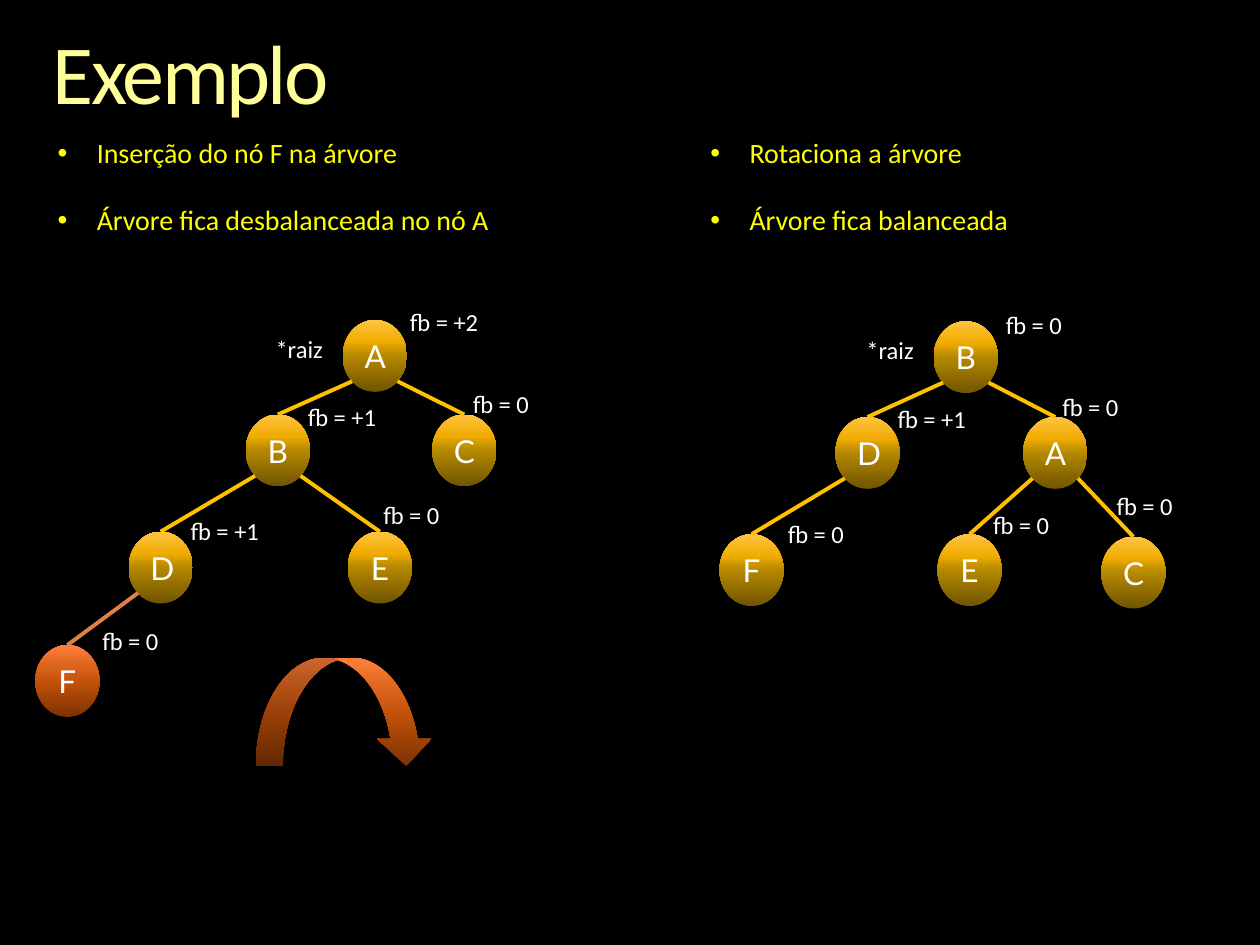
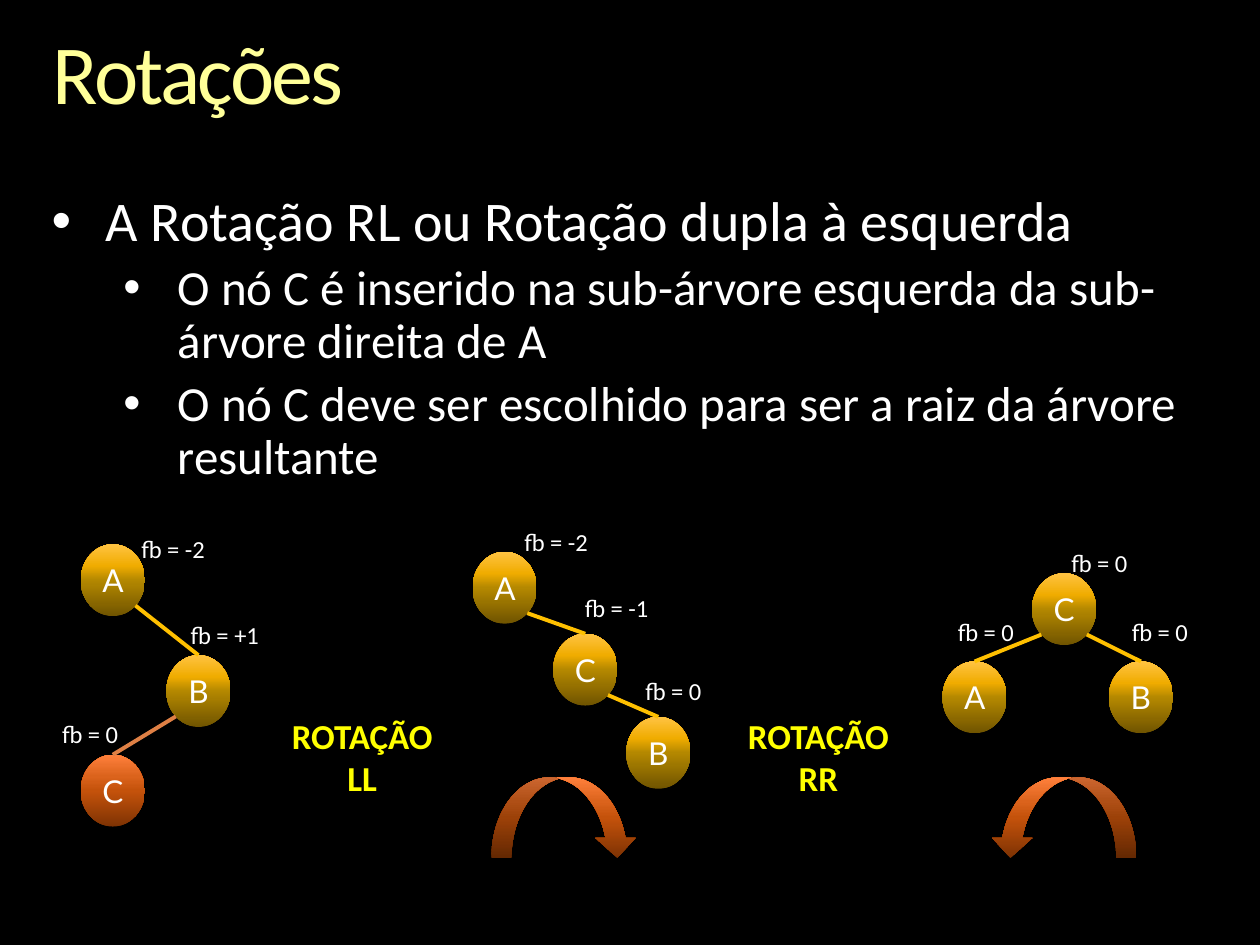
from lxml import etree
from pptx import Presentation
from pptx.dml.color import RGBColor
from pptx.enum.shapes import MSO_CONNECTOR, MSO_SHAPE
from pptx.enum.text import MSO_ANCHOR, MSO_AUTO_SIZE, PP_ALIGN
from pptx.oxml.ns import qn
from pptx.util import Inches, Pt

STRAIGHT = MSO_CONNECTOR.STRAIGHT
OVAL, CURVED_ARROW = MSO_SHAPE.OVAL, MSO_SHAPE.CURVED_DOWN_ARROW
TOP, NO_FIT = MSO_ANCHOR.TOP, MSO_AUTO_SIZE.NONE
LEFT, CENTER = PP_ALIGN.LEFT, PP_ALIGN.CENTER

BLACK = RGBColor(0x00, 0x00, 0x00)
WHITE = RGBColor(0xFF, 0xFF, 0xFF)
YELLOW = RGBColor(0xFF, 0xFF, 0x00)
GOLD = RGBColor(0xFF, 0xC0, 0x00)
ORANGE = RGBColor(0xDF, 0x80, 0x45)
CREAM, PALE, AMBER = (RGBColor(0xFF, 0xFF, 0xB9), RGBColor(0xFF, 0xFF, 0x99),
                      RGBColor(0xF6, 0xAE, 0x1E))

# Gradients: (position in percent, colour)
TITLE_STOPS = [(0, CREAM), (36, PALE), (86, AMBER)]
GOLD_STOPS = [(0, RGBColor(0x70, 0x54, 0x00)), (50, RGBColor(0xB4, 0x88, 0x00)),
              (70, RGBColor(0xF0, 0xAC, 0x00)), (100, RGBColor(0xFF, 0xC3, 0x42))]
ORANGE_STOPS = [(0, RGBColor(0x7D, 0x32, 0x03)), (50, RGBColor(0xC4, 0x52, 0x0B)),
                (70, RGBColor(0xDB, 0x63, 0x1C)), (100, RGBColor(0xFF, 0x80, 0x3C))]

BODY_FONT, NODE_FONT = "Calibri", "Lato"

# Grid of 100 columns by 75 rows; all lengths below are in its cells
SLIDE_W, SLIDE_H = Inches(10), Inches(7.5)
COL, ROW = SLIDE_W / 100, SLIDE_H / 75
NODE_W, NODE_H = 5.1, 5.7
LABEL_W, LABEL_H = 9.7, 3.4
DIAGONAL = 0.5 ** 0.5


def cells(*lengths):
    """Turn alternating columns and rows into slide lengths."""
    return [round(n * (ROW if i % 2 else COL)) for i, n in enumerate(lengths)]


def fill_gradient(fill, stops, angle):
    fill.gradient()
    fill.gradient_angle = angle
    stop_list = fill._xPr.find(qn("a:gradFill")).find(qn("a:gsLst"))
    for old in list(stop_list):
        stop_list.remove(old)
    for position, color in stops:
        stop = etree.SubElement(stop_list, qn("a:gs"), pos=str(position * 1000))
        etree.SubElement(stop, qn("a:srgbClr"), val=str(color))


def add_run(p, text, size, color=WHITE, font=BODY_FONT, bold=False):
    r = p.add_run()
    r.text = text
    r.font.size, r.font.name, r.font.bold = Pt(size), font, bold
    if color is not None:
        r.font.color.rgb = color
    return r


def add_text_box(shapes, box, inset=True):
    tf = shapes.add_textbox(*cells(*box)).text_frame
    tf.word_wrap = True
    if not inset:
        tf.margin_left = tf.margin_right = tf.margin_top = tf.margin_bottom = 0
    return tf


def add_centred_text(shapes, box, text, size, color=WHITE, bold=False):
    p = add_text_box(shapes, box).paragraphs[0]
    p.alignment = CENTER
    add_run(p, text, size, color, bold=bold)


def add_bullets(shapes, box, items, color, gap, line_spacing=1.0, inset=True):
    """Items are (level, text, size, margin, hang), the last two in columns."""
    tf = add_text_box(shapes, box, inset)
    for i, (level, text, size, margin, hang) in enumerate(items):
        p = tf.paragraphs[0] if i == 0 else tf.add_paragraph()
        p.level, p.line_spacing = level, line_spacing
        if i:
            p.space_before = Pt(gap)
        pPr = p._p.get_or_add_pPr()
        pPr.set("marL", str(round(margin * COL)))
        pPr.set("indent", str(round(-hang * COL)))
        etree.SubElement(pPr, qn("a:buFont"), typeface="Arial")
        etree.SubElement(pPr, qn("a:buChar"), char="•")
        add_run(p, text, size, color)


def add_gradient_shape(shapes, kind, box, stops):
    sp = shapes.add_shape(kind, *cells(*box))
    sp.shadow.inherit = False
    fill_gradient(sp.fill, stops, 90)
    sp.line.fill.background()
    return sp


def add_tree(s, origin, nodes, edges, new_node=None, root=None):
    """Nodes: name -> (x, y, balance label, label shift from the node's top centre)."""
    left, top = origin
    shapes = s.shapes.add_group_shape().shapes
    places = {name: (left + x, top + y) for name, (x, y, _, _) in nodes.items()}

    # Nodes
    for name, (x, y) in places.items():
        stops = ORANGE_STOPS if name == new_node else GOLD_STOPS
        sp = add_gradient_shape(shapes, OVAL, (x, y, NODE_W, NODE_H), stops)
        p = sp.text_frame.paragraphs[0]
        p.alignment = CENTER
        add_run(p, name, 18, font=NODE_FONT)

    # Edges, from the parent's lower diagonal to the top of the child
    for parent, child in edges:
        (px, py), (cx, cy) = places[parent], places[child]
        side = 1 if cx > px else -1
        start = (px + NODE_W * (1 + side * DIAGONAL) / 2, py + NODE_H * (1 + DIAGONAL) / 2)
        line = shapes.add_connector(STRAIGHT, *cells(*start, cx + NODE_W / 2, cy))
        line.line.color.rgb = ORANGE if child == new_node else GOLD
        line.line.width = Pt(2.25)
        etree.SubElement(line._element.spPr, qn("a:effectLst"))

    # Balance factors and root marker
    labels = [(name, text, shift) for name, (_, _, text, shift) in nodes.items()]
    if root:
        labels.append((root, "*raiz", (-6, 0.6)))
    for name, text, (dx, dy) in labels:
        x, y = places[name]
        box = (x + (NODE_W - LABEL_W) / 2 + dx, y + dy, LABEL_W, LABEL_H)
        add_centred_text(shapes, box, text, 14)


def add_rotation_arrow(s, box, flipped=False):
    sp = add_gradient_shape(s.shapes, CURVED_ARROW, box, ORANGE_STOPS)
    if flipped:
        sp._element.spPr.xfrm.set("flipH", "1")


def add_titled_slide(prs, title):
    s = prs.slides.add_slide(prs.slide_layouts[5])
    sp = s.shapes.title
    sp.left, sp.top, sp.width, sp.height = cells(4.2, 2.5, 91.7, 7.3)
    tf = sp.text_frame
    tf.margin_left = tf.margin_right = tf.margin_top = tf.margin_bottom = 0
    tf.vertical_anchor, tf.auto_size, tf.word_wrap = TOP, NO_FIT, True
    p = tf.paragraphs[0]
    p.alignment, p.line_spacing = LEFT, 0.9
    r = add_run(p, title, 48, color=None)
    fill_gradient(r.font.fill, TITLE_STOPS, 270)
    r.font._element.set("spc", "-150")
    return s


def build_example(prs):
    s = add_titled_slide(prs, "Exemplo")

    # Steps above each tree
    steps = [(3.6, "Inserção do nó F na árvore", "Árvore fica desbalanceada no nó A"),
             (55.4, "Rotaciona a árvore", "Árvore fica balanceada")]
    for left, *texts in steps:
        items = [(0, text, 16, 3.1, 3.1) for text in texts]
        add_bullets(s.shapes, (left, 10.3, 38.8, 9.1), items, YELLOW, gap=19)

    # Unbalanced tree
    add_tree(s, (2.8, 25.4), {
        "A": (24.4, 0, "fb = +2", (5.5, -1.5)),
        "B": (16.7, 7.5, "fb = +1", (5.1, -1.5)),
        "C": (31.5, 7.5, "fb = 0", (2.9, -2.5)),
        "D": (7.4, 16.8, "fb = +1", (5.1, -1.7)),
        "E": (24.8, 16.8, "fb = 0", (2.5, -3)),
        "F": (0, 25.8, "fb = 0", (5, -2)),
    }, ["AB", "AC", "BD", "BE", "DF"], new_node="F", root="A")
    add_rotation_arrow(s, (20.3, 52.2, 14.1, 8.6))

    # Balanced tree
    add_tree(s, (57.1, 25.5), {
        "B": (17, 0, "fb = 0", (5.4, -1.4)),
        "D": (9.2, 7.6, "fb = +1", (5.1, -1.5)),
        "A": (24.1, 7.6, "fb = 0", (2.8, -2.5)),
        "F": (0, 16.9, "fb = 0", (5.1, -1.7)),
        "E": (17.3, 16.9, "fb = 0", (4.1, -2.4)),
        "C": (30.3, 17.1, "fb = 0", (0.9, -4.1)),
    }, ["BD", "BA", "DF", "AE", "AC"], root="B")


def build_rotations(prs):
    s = add_titled_slide(prs, "Rotações")
    add_bullets(s.shapes, (4.1, 15.3, 93.9, 23.7), [
        (0, "A Rotação RL ou Rotação dupla à esquerda", 32, 4.3, 4.3),
        (1, "O nó C é inserido na sub-árvore esquerda da sub-árvore direita de A",
         28, 10, 4.3),
        (1, "O nó C deve ser escolhido para ser a raiz da árvore resultante",
         28, 10, 4.3),
    ], WHITE, gap=5.6, line_spacing=0.9, inset=False)

    # Tree before, between and after the two rotations
    add_tree(s, (6.4, 43.2), {
        "A": (0, 0, "fb = -2", (4.8, -1.3)),
        "B": (6.8, 8.8, "fb = +1", (2.1, -3.3)),
        "C": (0, 16.7, "fb = 0", (-1.8, -3.3)),
    }, ["AB", "BC"], new_node="C")
    add_tree(s, (37.5, 43.8), {
        "A": (0, 0, "fb = -2", (4.1, -2.5)),
        "C": (6.4, 6.5, "fb = -1", (2.5, -3.7)),
        "B": (12.2, 13.1, "fb = 0", (1.2, -3.7)),
    }, ["AC", "CB"])
    add_tree(s, (74.8, 45.5), {
        "C": (7.1, 0, "fb = 0", (2.8, -2.5)),
        "A": (0, 7, "fb = 0", (0.9, -4)),
        "B": (13.2, 7, "fb = 0", (1.5, -4)),
    }, ["CA", "CB"])

    # Rotation names and arrows
    rotations = [("ROTAÇÃO LL", 21.7, 39, False), ("ROTAÇÃO RR", 57.9, 78.6, True)]
    for text, text_left, arrow_left, flipped in rotations:
        add_centred_text(s.shapes, (text_left, 56.2, 14.1, 7.7), text, 20, YELLOW, bold=True)
        add_rotation_arrow(s, (arrow_left, 61.7, 11.6, 6.4), flipped)


def main():
    prs = Presentation()
    prs.slide_width, prs.slide_height = SLIDE_W, SLIDE_H
    background = prs.slide_master.background.fill
    background.solid()
    background.fore_color.rgb = BLACK
    build_example(prs)
    build_rotations(prs)
    prs.save("out.pptx")


if __name__ == "__main__":
    main()
